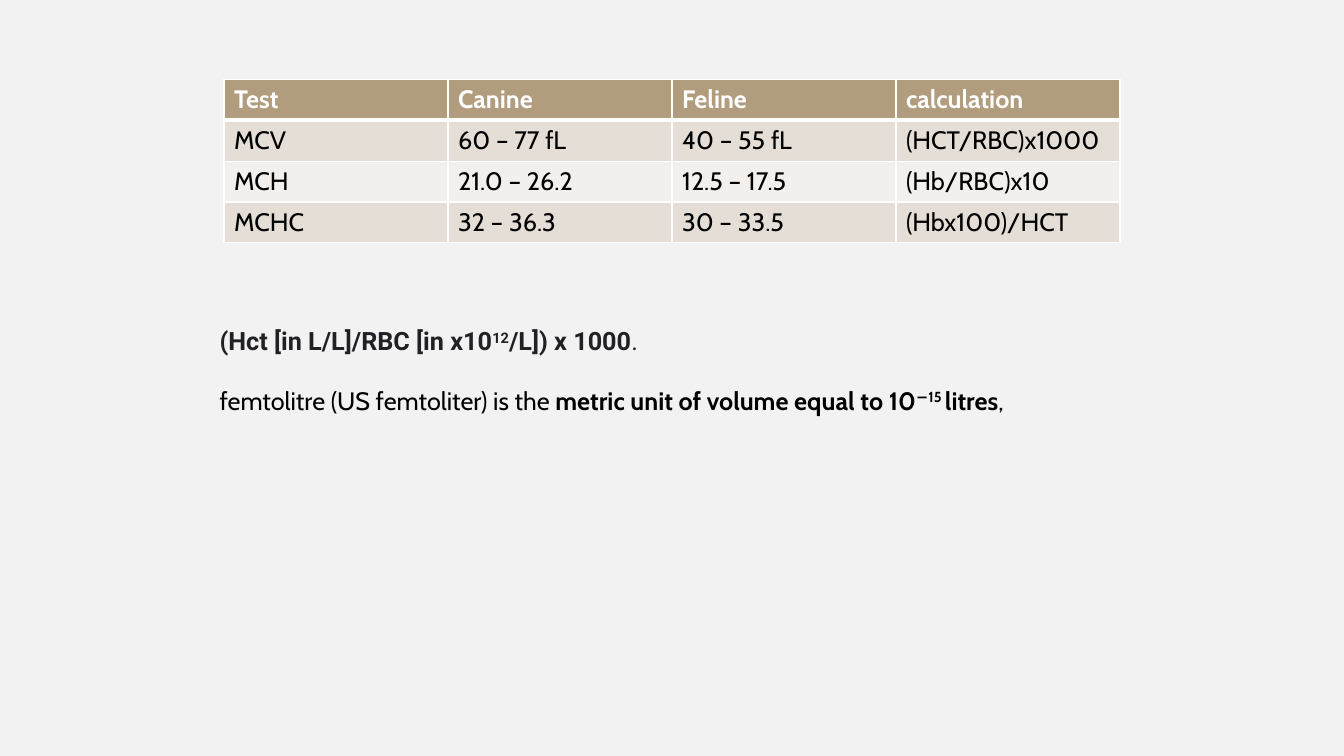
from lxml import etree
from pptx import Presentation
from pptx.dml.color import RGBColor
from pptx.oxml.ns import qn
from pptx.util import Inches, Pt

BACKGROUND = RGBColor(0xF2, 0xF2, 0xF2)
WHITE = RGBColor(0xFF, 0xFF, 0xFF)
BLACK = RGBColor(0x00, 0x00, 0x00)
CHARCOAL = RGBColor(0x20, 0x21, 0x24)
TAN = RGBColor(0xB1, 0x9C, 0x7D)
BAND_DARK = RGBColor(0xE4, 0xDE, 0xD7)
BAND_LIGHT = RGBColor(0xF2, 0xEF, 0xEC)

SLIDE_W, SLIDE_H = Inches(13.33), Inches(7.5)
COLUMN = SLIDE_W / 6

INDICES = [
    ["Test", "Canine", "Feline", "calculation"],
    ["MCV", "60 – 77 fL", "40 – 55 fL", "(HCT/RBC)x1000"],
    ["MCH", "21.0 – 26.2", "12.5 – 17.5", "(Hb/RBC)x10"],
    ["MCHC", "32 – 36.3", "30 – 33.5", "(Hbx100)/HCT"],
]

NOTES = [
    ("Roboto", CHARCOAL, [
        ("(Hct [in L/L]/RBC [in x10", True, 0),
        ("12", True, 30),
        ("/L]) x 1000", True, 0),
        (".", False, 0),
    ]),
    ("Cabin", BLACK, [
        ("femtolitre (US femtoliter) is the ", False, 0),
        ("metric unit of volume equal to 10", True, 0),
        ("−15 ", True, 30),
        ("litres", True, 0),
        (",", False, 0),
    ]),
]


class SlideBuilder:
    font = "Cabin"
    size = Pt(18)

    def __init__(self, prs):
        self.slide = prs.slides.add_slide(prs.slide_layouts[6])
        fill = self.slide.background.fill
        fill.solid()
        fill.fore_color.rgb = BACKGROUND

    def run(self, p, text, color, bold=False, font=None, raised=0):
        r = p.add_run()
        r.text = text
        r.font.name = font or self.font
        r.font.size = self.size
        r.font.bold = bold
        r.font.color.rgb = color
        if raised:
            r.font._element.set("baseline", str(raised * 1000))

    def borders(self, cell, widths):
        tcPr = cell._tc.get_or_add_tcPr()
        for i, (side, width) in enumerate(widths.items()):
            ln = etree.Element(qn(f"a:ln{side}"), w=str(Pt(width)))
            solid = etree.SubElement(ln, qn("a:solidFill"))
            etree.SubElement(solid, qn("a:srgbClr"), val=str(WHITE))
            tcPr.insert(i, ln)

    def table(self, rows, column, top, row_height):
        count = len(rows[0])
        frame = self.slide.shapes.add_table(
            len(rows), count, int(column * COLUMN), int(top * SLIDE_H),
            int(count * COLUMN), int(len(rows) * row_height * SLIDE_H))
        for y, values in enumerate(rows):
            header = y == 0
            band = TAN if header else BAND_DARK if y % 2 else BAND_LIGHT
            widths = {"L": 1, "R": 1, "T": 3 if y == 1 else 1, "B": 3 if header else 1}
            for x, value in enumerate(values):
                cell = frame.table.cell(y, x)
                cell.fill.solid()
                cell.fill.fore_color.rgb = band
                self.run(cell.text_frame.paragraphs[0], value,
                         WHITE if header else BLACK, header)
                self.borders(cell, widths)

    def text(self, paragraphs, left, top, width, height, gap):
        sp = self.slide.shapes.add_textbox(
            int(left * SLIDE_W), int(top * SLIDE_H),
            int(width * SLIDE_W), int(height * SLIDE_H))
        tf = sp.text_frame
        tf.word_wrap = True
        for i, (font, color, runs) in enumerate(paragraphs):
            p = tf.add_paragraph() if i else tf.paragraphs[0]
            if i:
                p.space_before = Pt(gap)
            for text, bold, raised in runs:
                self.run(p, text, color, bold, font, raised)


def main():
    prs = Presentation()
    prs.slide_width, prs.slide_height = SLIDE_W, SLIDE_H
    s = SlideBuilder(prs)
    s.table(INDICES, column=1, top=0.105, row_height=0.054)
    s.text(NOTES, left=0.156, top=0.424, width=0.65, height=0.135, gap=21)
    prs.save("out.pptx")


if __name__ == "__main__":
    main()
